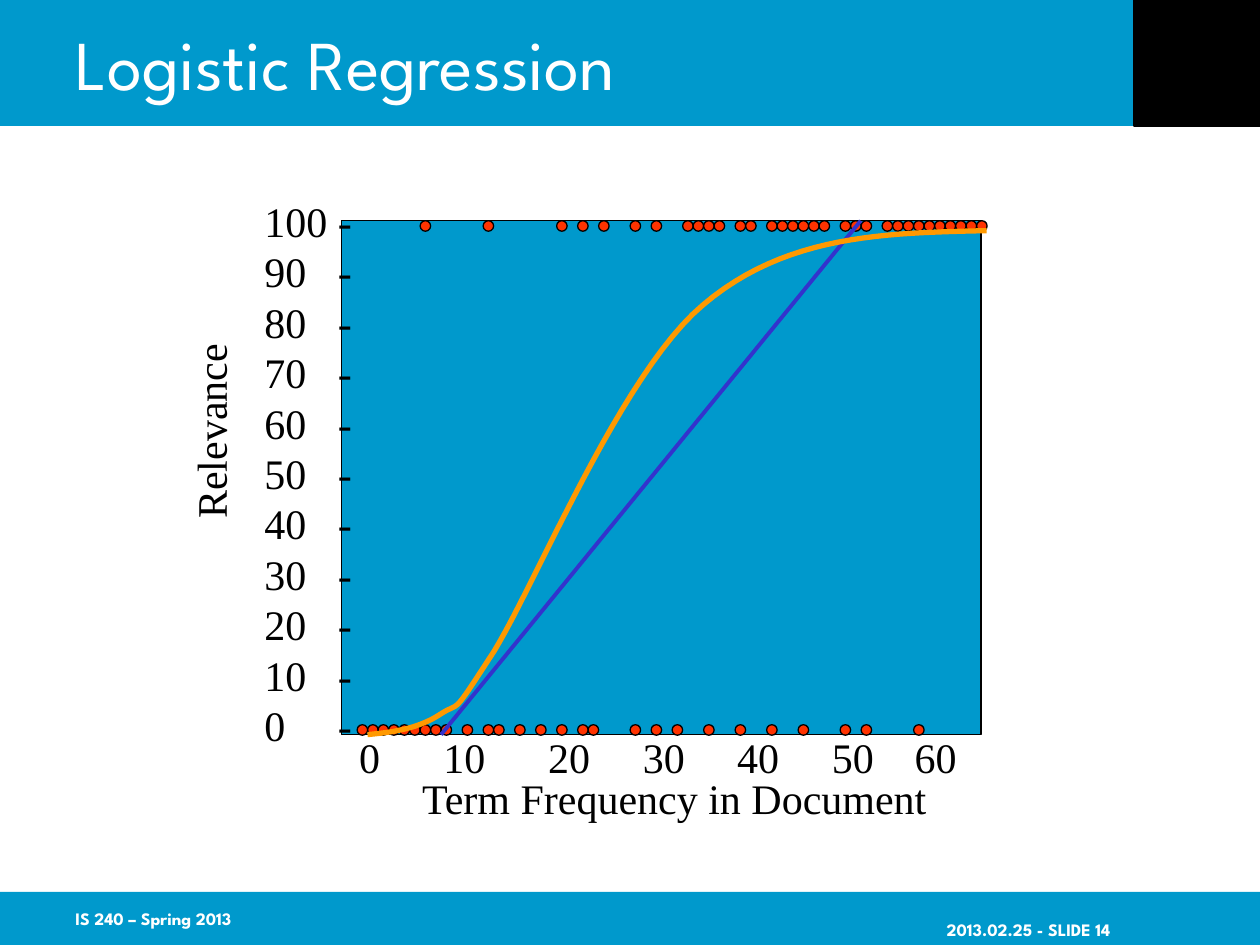
from dataclasses import dataclass

from lxml import etree
from pptx import Presentation
from pptx.dml.color import RGBColor
from pptx.enum.shapes import MSO_CONNECTOR, MSO_SHAPE
from pptx.enum.text import MSO_ANCHOR, PP_ALIGN
from pptx.oxml.ns import qn
from pptx.util import Cm, Pt

RECT, OVAL = MSO_SHAPE.RECTANGLE, MSO_SHAPE.OVAL
STRAIGHT = MSO_CONNECTOR.STRAIGHT
TOP, MIDDLE = MSO_ANCHOR.TOP, MSO_ANCHOR.MIDDLE
LEFT, RIGHT = PP_ALIGN.LEFT, PP_ALIGN.RIGHT
SANS, SERIF = "League Spartan", "Times New Roman"
BLUE, BLACK, WHITE = "0099CC", "000000", "FFFFFF"
RED, INDIGO, ORANGE = "FF3300", "3333CC", "FF9900"


@dataclass
class Box:
    """A place on the slide, in centimetres."""
    x: float
    y: float
    w: float
    h: float

    def lengths(self) -> tuple:
        return Cm(self.x), Cm(self.y), Cm(self.w), Cm(self.h)


@dataclass
class Label:
    box: Box
    lines: list
    font: str = SERIF
    size: float = 24
    color: str = BLACK
    bold: bool = False
    align: int = LEFT
    anchor: int = TOP
    insets: tuple = (0.25, 0.13, 0.25, 0.13)
    tabs: tuple = ()
    spacing: float = 0
    rotation: float = 0


def rgb(color: str) -> RGBColor:
    return RGBColor.from_string(color)


def add_run(p, text: str, font: str, size: float, color: str, bold: bool = False) -> None:
    r = p.add_run()
    r.text = text
    r.font.name, r.font.size, r.font.bold = font, Pt(size), bold
    r.font.color.rgb = rgb(color)


def set_tabs(p, tabs: tuple) -> None:
    tab_list = etree.SubElement(p._p.get_or_add_pPr(), qn("a:tabLst"))
    for pos in tabs:
        etree.SubElement(tab_list, qn("a:tab"), pos=str(Cm(pos)), algn="l")


def add_label(s, label: Label) -> None:
    tb = s.shapes.add_textbox(*label.box.lengths())
    tb.rotation = label.rotation
    tf = tb.text_frame
    tf.word_wrap = True
    tf.vertical_anchor = label.anchor
    (tf.margin_left, tf.margin_top,
     tf.margin_right, tf.margin_bottom) = map(Cm, label.insets)
    for i, text in enumerate(label.lines):
        p = tf.add_paragraph() if i else tf.paragraphs[0]
        p.alignment = label.align
        if label.spacing:
            p.line_spacing = Pt(label.spacing)
        if label.tabs:
            set_tabs(p, label.tabs)
        add_run(p, text, label.font, label.size, label.color, label.bold)


def add_block(s, box: Box, fill: str, outlined: bool = False, kind: int = RECT) -> None:
    sp = s.shapes.add_shape(kind, *box.lengths())
    sp.shadow.inherit = False
    sp.fill.solid()
    sp.fill.fore_color.rgb = rgb(fill)
    if outlined:
        sp.line.color.rgb = rgb(BLACK)
        sp.line.width = Pt(0.75)
    else:
        sp.line.fill.background()


def add_dots(s, columns: list, y: float) -> None:
    step = 2.54 / 12
    for n in columns:
        add_block(s, Box(7.2 + n * step, y, step, step), RED, True, OVAL)


def bezier(p0: tuple, p1: tuple, p2: tuple, p3: tuple, steps: int = 24) -> list:
    points = []
    for i in range(1, steps + 1):
        t = i / steps
        u = 1 - t
        points.append(tuple(
            Cm(u**3 * a + 3 * u * u * t * b + 3 * u * t * t * c + t**3 * d)
            for a, b, c, d in zip(p0, p1, p2, p3)))
    return points


def add_curve(s, knots: list, color: str, width: float) -> None:
    x, y = knots[0]
    builder = s.shapes.build_freeform(Cm(x), Cm(y))
    for i in range(0, len(knots) - 1, 3):
        builder.add_line_segments(bezier(*knots[i:i + 4]), close=False)
    sp = builder.convert_to_shape()
    sp.shadow.inherit = False
    sp.fill.background()
    sp.line.color.rgb = rgb(color)
    sp.line.width = Pt(width)


def add_line(s, start: tuple, end: tuple, color: str, width: float) -> None:
    line = s.shapes.add_connector(STRAIGHT, *map(Cm, start + end))
    line.line.color.rgb = rgb(color)
    line.line.width = Pt(width)
    etree.SubElement(line._element.spPr, qn("a:effectLst"))


# Columns of the observations, counted along the frequency axis
RELEVANT = [6, 12, 19, 21, 23, 26, 28, *range(31, 35), 36, 37, *range(39, 45),
            46, 47, 48, *range(50, 60)]
NOT_RELEVANT = [*range(9), 10, 12, 13, 15, 17, 19, 21, 22, 26, 28, 30, 33, 36,
                39, 42, 46, 48, 53]
LOGISTIC = [(7.41, 14.81), (7.95, 14.76), (8.46, 14.68), (8.89, 14.39),
            (9.32, 14.12), (9.07, 14.5), (9.96, 13.13),
            (10.82, 11.73), (12.52, 7.54), (14.17, 6.15),
            (15.85, 4.72), (17.86, 4.7), (19.89, 4.65)]

FOOTERS = [
    Label(Box(18.85, 17.98, 5.28, 1.07), ["2013.02.25 - SLIDE 14"], SANS, 10, WHITE,
          True, RIGHT, MIDDLE, (0, 0.51, 1.75, 0.08)),
    Label(Box(1.27, 17.98, 5.28, 1.07), ["IS 240 – Spring 2013"], SANS, 10, WHITE,
          True, LEFT, MIDDLE, (0.25, 0.13, 0, 0.13)),
]
AXES = [
    Label(Box(5.08, 3.81, 2.6, 11.4), [f"{n}\t-" for n in range(100, -1, -10)],
          tabs=(1.48,), spacing=28.8),
    Label(Box(6.99, 14.61, 13, 1.27), ["\t".join(str(n) for n in range(0, 61, 10))],
          tabs=(1.7, 3.81, 5.72, 7.62, 9.53, 11.2)),
    Label(Box(8.26, 15.44, 11, 1.27), ["Term Frequency in Document"]),
    Label(Box(2.08, 7.92, 4.3, 1.27), ["Relevance"], rotation=270),
]


def main() -> None:
    prs = Presentation()
    prs.slide_width, prs.slide_height = Cm(25.4), Cm(19.05)
    s = prs.slides.add_slide(prs.slide_layouts[5])

    # Bands and footer
    add_block(s, Box(0, 0, 25.4, 2.54), BLUE)
    add_block(s, Box(0, 17.98, 25.4, 1.07), BLUE)
    add_block(s, Box(22.86, 0, 2.54, 2.54), BLACK, True)
    for label in FOOTERS:
        add_label(s, label)

    # Title, brought in front of the band
    title = s.shapes.title
    title.left, title.top, title.width, title.height = Box(1.27, 0, 21.59, 2.54).lengths()
    s.shapes._spTree.append(title._element)
    title.text_frame.vertical_anchor = MIDDLE
    p = title.text_frame.paragraphs[0]
    p.alignment = LEFT
    add_run(p, "Logistic Regression", SANS, 40, WHITE)

    # Plot area, axes and observations
    add_block(s, Box(6.88, 4.45, 12.9, 10.36), BLUE, True)
    for label in AXES:
        add_label(s, label)
    add_dots(s, NOT_RELEVANT, 14.61)
    add_dots(s, RELEVANT, 4.45)

    # Linear and logistic fits
    add_line(s, (8.89, 14.81), (17.35, 4.45), INDIGO, 2.25)
    add_curve(s, LOGISTIC, ORANGE, 3)

    prs.save("out.pptx")


if __name__ == "__main__":
    main()
